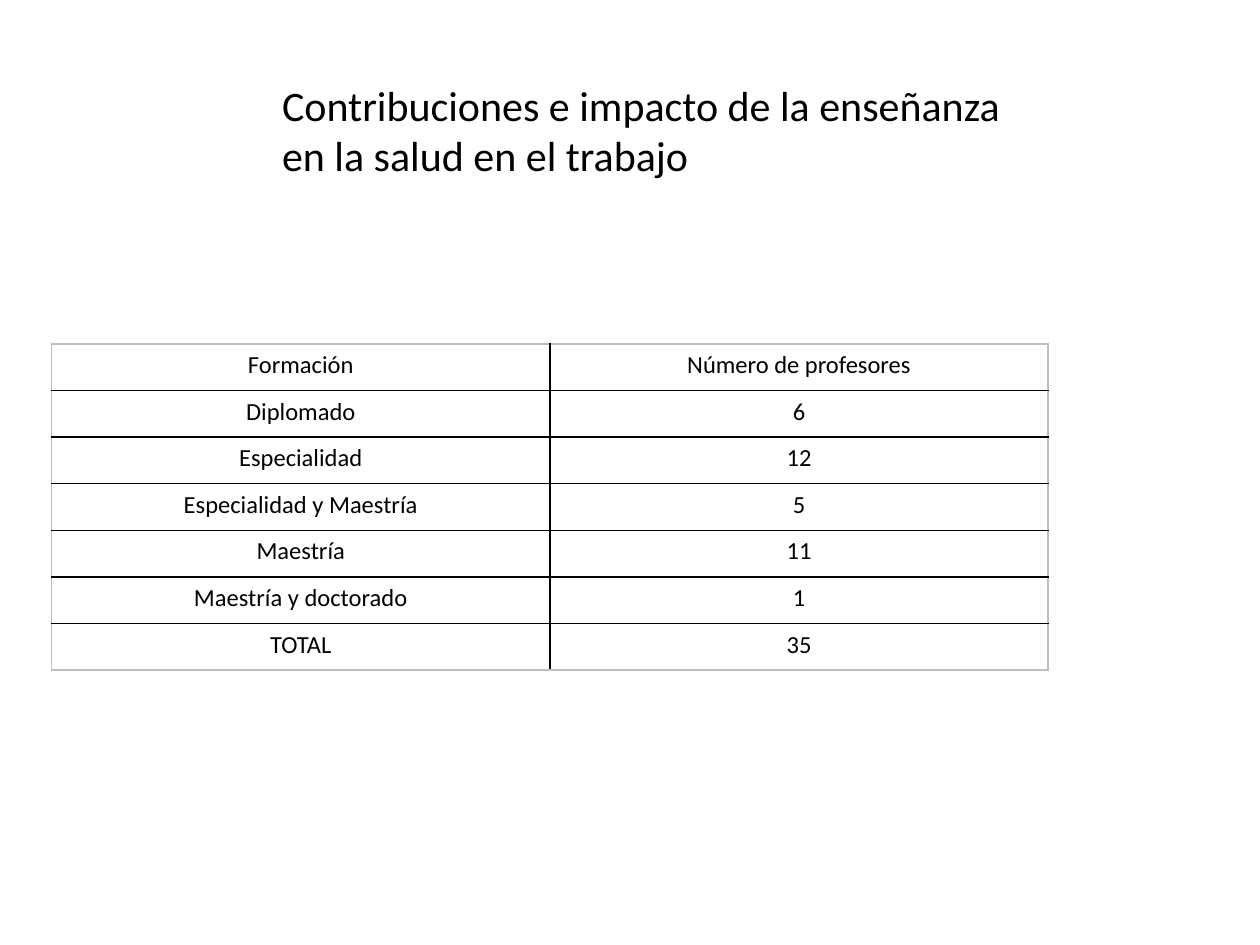
from lxml.etree import SubElement
from pptx import Presentation
from pptx.dml.color import RGBColor
from pptx.enum.text import MSO_ANCHOR, PP_ALIGN
from pptx.oxml.ns import qn
from pptx.util import Inches, Pt

COLORS = {"text": "000000", "inner": "000000", "outer": "BFBFBF"}
FONT = "Calibri"
COLUMN_WIDTH, ROW_HEIGHT = 3.955, 0.37
FACULTY = [
    ("Formación", "Número de profesores"),
    ("Diplomado", "6"),
    ("Especialidad", "12"),
    ("Especialidad y Maestría", "5"),
    ("Maestría", "11"),
    ("Maestría y doctorado", "1"),
    ("TOTAL", "35"),
]


def write_text(frame, text, size, align):
    paragraph = frame.paragraphs[0]
    paragraph.text = text
    paragraph.alignment = align
    font = paragraph.runs[0].font
    font.name, font.size = FONT, Pt(size)
    font.color.rgb = RGBColor.from_string(COLORS["text"])


def add_title(slide, text, left, top, width, height):
    title = slide.shapes.add_textbox(*map(Inches, (left, top, width, height))).text_frame
    title.word_wrap = True
    title.vertical_anchor = MSO_ANCHOR.TOP
    title.margin_right = Inches(0.05)
    write_text(title, text, size=24, align=PP_ALIGN.LEFT)


def add_border(cell, side, color):
    line = SubElement(cell._tc.get_or_add_tcPr(), qn(f"a:ln{side}"), w=str(Pt(1)))
    fill = SubElement(line, qn("a:solidFill"))
    SubElement(fill, qn("a:srgbClr"), val=color)


def add_faculty_table(slide, rows, left, top):
    row_count, column_count = len(rows), len(rows[0])
    table = slide.shapes.add_table(
        row_count, column_count, Inches(left), Inches(top),
        Inches(column_count * COLUMN_WIDTH), Inches(row_count * ROW_HEIGHT),
    ).table
    table.first_row = table.horz_banding = False
    for row in table.rows:
        row.height = Inches(ROW_HEIGHT)

    for r, values in enumerate(rows):
        for c, value in enumerate(values):
            cell = table.cell(r, c)
            cell.vertical_anchor = MSO_ANCHOR.TOP
            write_text(cell.text_frame, value, size=14, align=PP_ALIGN.CENTER)
            # Grey around the table, black between its cells
            at_edge = {"L": c == 0, "R": c == column_count - 1,
                       "T": r == 0, "B": r == row_count - 1}
            for side, is_outer in at_edge.items():
                add_border(cell, side, COLORS["outer" if is_outer else "inner"])
            cell.fill.background()


def main():
    deck = Presentation()
    deck.slide_width, deck.slide_height = Inches(10), Inches(7.5)
    slide = deck.slides.add_slide(deck.slide_layouts[6])

    # Heading
    add_title(slide, "Contribuciones e impacto de la enseñanza en la salud en el trabajo",
              left=2.14, top=0.58, width=5.9, height=1.61)
    # Teachers by level of training
    add_faculty_table(slide, FACULTY, left=0.41, top=2.73)

    deck.save("out.pptx")


if __name__ == "__main__":
    main()
